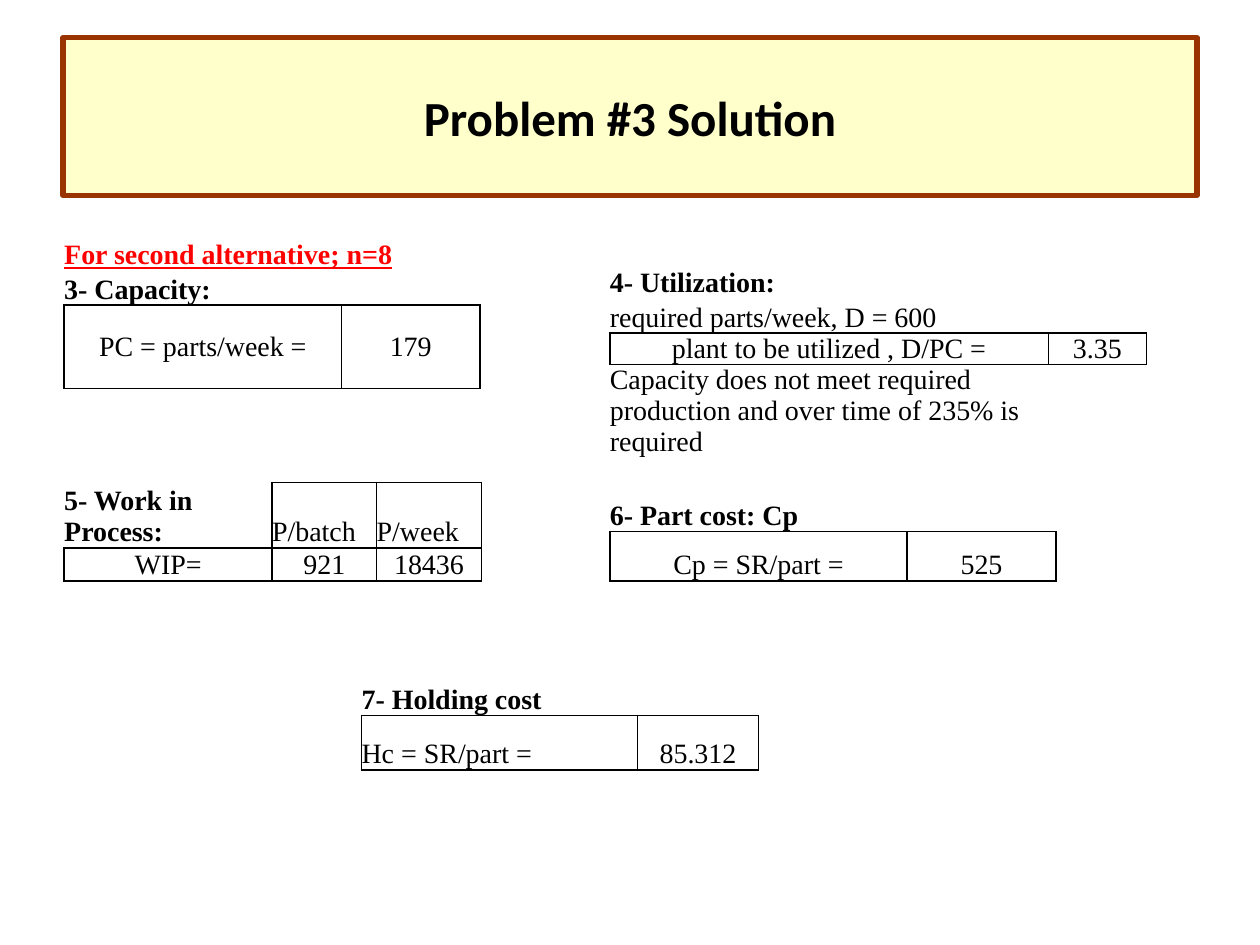
from lxml import etree
from pptx import Presentation
from pptx.dml import color
from pptx.enum import text
from pptx.oxml import ns
from pptx.util import Inches, Pt

COLORS = {"black": "000000", "red": "FF0000", "cream": "FFFFCC", "brown": "993300"}
PLAIN_TABLE_STYLE = "{2D5ABB26-0587-4C30-8999-92F81FD0307C}"
TITLE = "Problem #3 Solution"
BLANK = ("", "blank")

STYLES = {
    "alert": dict(color="red", bold=True, underline=True),
    "heading": dict(bold=True),
    "blank": {},
    "line": {},
    "note": dict(middle=True),
    "label": dict(boxed=True),
    "value": dict(boxed=True, center=True),
    "tall value": dict(boxed=True, center=True, middle=True),
}

TABLES = [
    dict(at=(0.51, 1.7), columns=[2.2, 1.1], heights=[0.45, 0.24, 0.66], rows=[
        [("For second alternative; n=8", "alert"), None],
        [("3- Capacity:", "heading"), BLANK],
        [("PC = parts/week =", "tall value"), ("179", "tall value")],
    ]),
    dict(at=(4.84, 2.1), columns=[1.87, 0.86, 0.75, 0.78], heights=[0.24, 0.24, 0.24, 0.74], rows=[
        [("4- Utilization:", "heading"), BLANK, BLANK, BLANK],
        [("required parts/week, D = 600", "line"), None, None, BLANK],
        [("plant to be utilized , D/PC =", "value"), None, None, ("3.35", "value")],
        [("Capacity does not meet required production and over time of 235% is required", "note"),
         None, None, BLANK],
    ]),
    dict(at=(0.51, 3.83), columns=[1.65, 0.83, 0.83], heights=[0.52, 0.26], rows=[
        [("5- Work in Process:", "heading"), ("P/batch", "label"), ("P/week", "label")],
        [("WIP=", "value"), ("921", "value"), ("18436", "value")],
    ]),
    dict(at=(4.84, 3.83), columns=[2.36, 1.18], heights=[0.39, 0.39], rows=[
        [("6- Part cost: Cp", "heading"), BLANK],
        [("Cp = SR/part =", "value"), ("525", "value")],
    ]),
    dict(at=(2.87, 5.25), columns=[2.19, 0.96], heights=[0.43, 0.43], rows=[
        [("7- Holding cost", "heading"), BLANK],
        [("Hc = SR/part =", "label"), ("85.312", "value")],
    ]),
]


def rgb(name):
    return color.RGBColor.from_string(COLORS[name])


def set_font(font, name, size, color_name="black", bold=False, underline=False):
    font.name, font.size = name, Pt(size)
    font.bold, font.underline = bold, underline
    font.color.rgb = rgb(color_name)


def add_edge(cell, side):
    line = etree.SubElement(cell._tc.get_or_add_tcPr(), ns.qn(f"a:ln{side}"), w=str(Pt(1)))
    fill = etree.SubElement(line, ns.qn("a:solidFill"))
    etree.SubElement(fill, ns.qn("a:srgbClr"), val=COLORS["black"])


def format_cell(cell, words, style):
    cell.margin_left = cell.margin_right = cell.margin_top = cell.margin_bottom = 0
    cell.vertical_anchor = text.MSO_ANCHOR.MIDDLE if style.get("middle") else text.MSO_ANCHOR.BOTTOM
    cell.text_frame.text = words
    paragraph = cell.text_frame.paragraphs[0]
    paragraph.alignment = text.PP_ALIGN.CENTER if style.get("center") else text.PP_ALIGN.LEFT
    for run in paragraph.runs:
        set_font(run.font, "Times New Roman", 16, style.get("color", "black"),
                 style.get("bold", False), style.get("underline", False))
    if not words:
        etree.SubElement(paragraph._p, ns.qn("a:endParaRPr"), sz="1600")


def add_table(slide, at, columns, heights, rows):
    left, top = at
    frame = slide.shapes.add_table(len(rows), len(columns), Inches(left), Inches(top),
                                   Inches(sum(columns)), Inches(sum(heights)))
    table = frame.table
    table.first_row = table.horz_banding = False
    table._tbl.tblPr.find(ns.qn("a:tableStyleId")).text = PLAIN_TABLE_STYLE
    for column, width in zip(table.columns, columns):
        column.width = Inches(width)
    for row, height in zip(table.rows, heights):
        row.height = Inches(height)

    boxed = set()
    for r, row in enumerate(rows):
        for c, item in enumerate(row):
            if item:
                start, style = c, STYLES[item[1]]
            elif c + 1 == len(row) or row[c + 1]:
                table.cell(r, start).merge(table.cell(r, c))
            format_cell(table.cell(r, c), item[0] if item else "", style)
            if style.get("boxed"):
                boxed.add((r, c))

    for r, row in enumerate(rows):
        for c in range(len(row)):
            cell = table.cell(r, c)
            neighbours = {"L": (r, c - 1), "R": (r, c + 1), "T": (r - 1, c), "B": (r + 1, c)}
            for side, neighbour in neighbours.items():
                if (r, c) in boxed or neighbour in boxed:
                    add_edge(cell, side)
            cell.fill.background()


def add_title(slide):
    title = slide.shapes.title
    title.left, title.top, title.width, title.height = map(Inches, (0.5, 0.3, 9, 1.25))
    title.fill.solid()
    title.fill.fore_color.rgb = rgb("cream")
    title.line.color.rgb = rgb("brown")
    title.line.width = Pt(3)
    title.text_frame.text = TITLE
    title.text_frame.vertical_anchor = text.MSO_ANCHOR.MIDDLE
    paragraph = title.text_frame.paragraphs[0]
    paragraph.alignment = text.PP_ALIGN.CENTER
    set_font(paragraph.runs[0].font, "Calibri", 28, bold=True)


def main():
    """Build the slide of capacity, utilization and cost results."""
    presentation = Presentation()
    presentation.slide_width, presentation.slide_height = Inches(10), Inches(7.5)
    slide = presentation.slides.add_slide(presentation.slide_layouts[5])
    add_title(slide)
    for table in TABLES:
        add_table(slide, **table)
    presentation.save("out.pptx")


if __name__ == "__main__":
    main()
